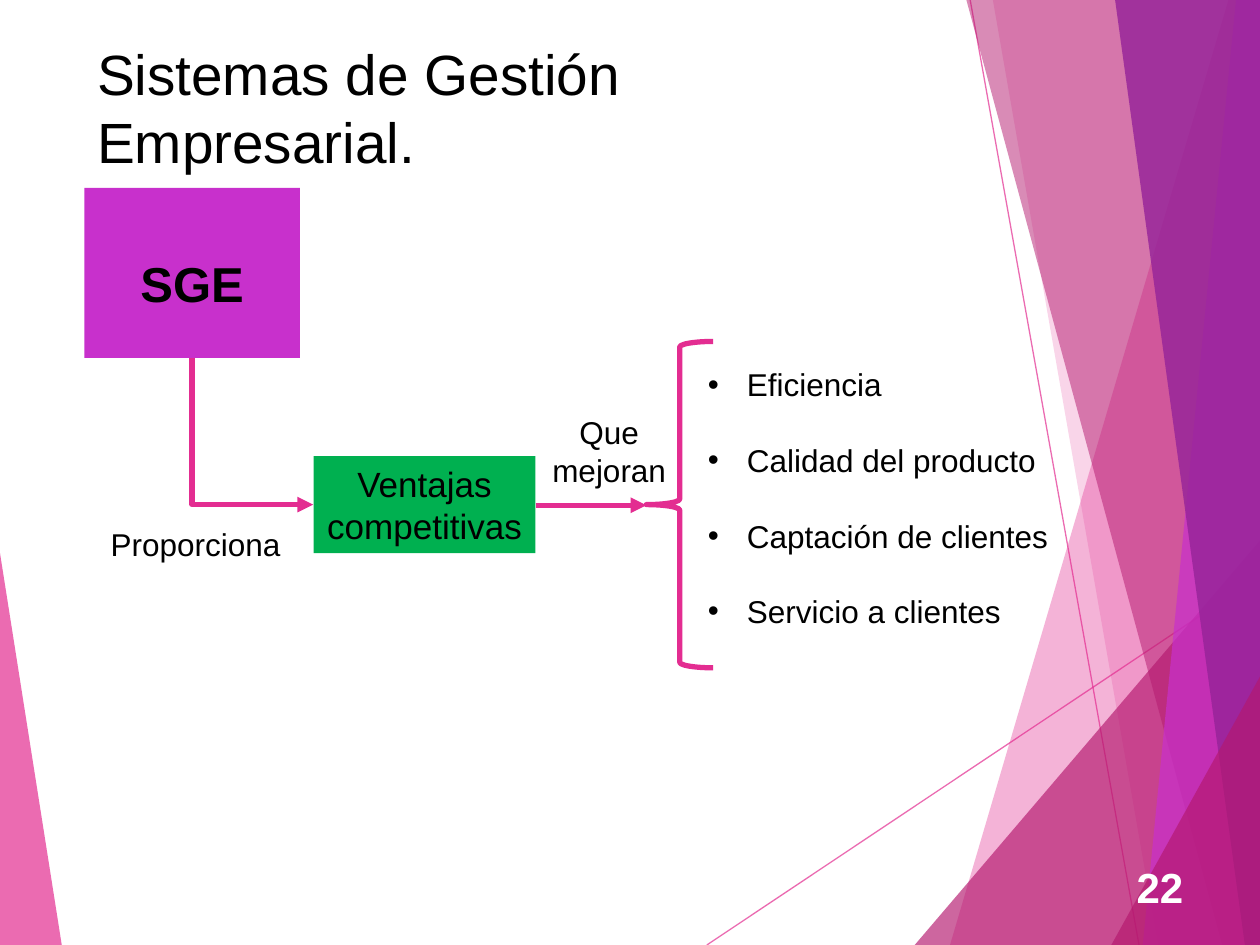
from lxml import etree
from pptx import Presentation
from pptx import util as u
from pptx.dml import color
from pptx.enum import shapes, text
from pptx.oxml import ns

PINK, WINE, ORCHID, PURPLE = "E32D91", "B4186E", "C830CC", "962499"
BLACK, WHITE, GREEN = "000000", "FFFFFF", "00B050"
ARROW = shapes.MSO_CONNECTOR.STRAIGHT
ELBOW = shapes.MSO_CONNECTOR.ELBOW
LEFT, CENTER, RIGHT = text.PP_ALIGN.LEFT, text.PP_ALIGN.CENTER, text.PP_ALIGN.RIGHT
TOP, MIDDLE = text.MSO_ANCHOR.TOP, text.MSO_ANCHOR.MIDDLE

deck = Presentation()
deck.slide_width, deck.slide_height = u.Inches(10), u.Inches(7.5)
cell = deck.slide_width // 1000
page = deck.slides.add_slide(deck.slide_layouts[5])


def colour(fill, value, opacity=100):
    fill.solid()
    fill.fore_color.rgb = color.RGBColor.from_string(value)
    if opacity < 100:
        node = fill._xPr.find(".//" + ns.qn("a:srgbClr"))
        etree.SubElement(node, ns.qn("a:alpha"), val=str(opacity * 1000))


def write(box, lines, size, align, anchor=TOP, wrap=False, value=BLACK, bold=False):
    frame = box.text_frame
    frame.text = "\n".join(lines)
    frame.word_wrap = wrap
    frame.auto_size = text.MSO_AUTO_SIZE.NONE
    frame.vertical_anchor = anchor
    for para in frame.paragraphs:
        para.alignment = align
        para.line_spacing = u.Pt(size * 1.2)
        for span in para.runs:
            span.font.name, span.font.size, span.font.bold = "Arial", u.Pt(size), bold
            colour(span.font.fill, value)


lines = [
    (ARROW, (561, 750, 1000, 457), 0.75, 70, False),
    (ARROW, (770, 0, 904, 750), 0.75, 70, False),
    (ELBOW, (259, 294, 142, 390), 3, 100, True),
    (ARROW, (425, 401, 513, 401), 3, 100, True),
]
for kind, ends, weight, opacity, arrowhead in lines:
    line = page.shapes.add_connector(kind, *[n * cell for n in ends])
    line.line.width = u.Pt(weight)
    colour(line.line.fill, PINK, opacity)
    properties = line.element.spPr
    if arrowhead:
        etree.SubElement(properties.find(ns.qn("a:ln")), ns.qn("a:tailEnd"), type="triangle")
    if kind == ELBOW:
        properties.find(ns.qn("a:xfrm")).set("rot", "16200000")
        properties.find(ns.qn("a:prstGeom")).set("prst", "bentConnector2")
    etree.SubElement(properties, ns.qn("a:effectLst"))

panels = [
    ([(0, 439), (49, 750), (0, 750)], PINK, 70),
    ([(975, 0), (754, 750), (1000, 750), (1000, 0)], PINK, 36),
    ([(788, 0), (919, 750), (1000, 750), (1000, 0)], PINK, 20),
    ([(726, 750), (1000, 429), (1000, 750)], WINE, 66),
    ([(767, 0), (970, 750), (1000, 750), (1000, 0)], WINE, 50),
    ([(981, 0), (907, 750), (1000, 750), (1000, 0)], ORCHID, 70),
    ([(885, 0), (988, 750), (1000, 750), (1000, 0)], PURPLE, 82),
    ([(882, 750), (1000, 537), (1000, 750)], WINE, 66),
]
for points, value, opacity in panels:
    outline = page.shapes.build_freeform(*points[0], scale=cell)
    outline.add_line_segments(points[1:], close=True)
    panel = outline.convert_to_shape()
    panel.shadow.inherit = False
    panel.line.fill.background()
    colour(panel.fill, value, opacity)

title = page.shapes.title
title.left, title.top, title.width, title.height = [n * cell for n in (67, 21, 694, 128)]
write(title, ["Sistemas de Gestión Empresarial."], 32.4, LEFT, MIDDLE, wrap=True)

blocks = [
    ((67, 149, 171, 135), ORCHID, ["SGE"], 28, True),
    ((249, 362, 176, 77), GREEN, ["Ventajas", "competitivas"], 20, False),
]
for place, value, words, size, bold in blocks:
    block = page.shapes.add_shape(shapes.MSO_SHAPE.RECTANGLE, *[n * cell for n in place])
    block.shadow.inherit = False
    block.line.fill.background()
    colour(block.fill, value)
    write(block, words, size, CENTER, bold=bold)
    if bold:
        block.text_frame.margin_top = 52 * cell

brace = page.shapes.add_shape(shapes.MSO_SHAPE.LEFT_BRACE, *[n * cell for n in (513, 271, 53, 259)])
brace.shadow.inherit = False
brace.fill.background()
brace.line.width = u.Pt(3)
colour(brace.line.fill, PINK)

labels = [
    ((78, 412, 156, 40), ["Proporciona"], LEFT),
    ((428, 323, 111, 71), ["Que", "mejoran"], CENTER),
    ((552, 285, 293, 222),
     ["Eficiencia", "Calidad del producto", "Captación de clientes", "Servicio a clientes"], LEFT),
]
for place, words, align in labels:
    label = page.shapes.add_textbox(*[n * cell for n in place])
    write(label, words, 18, align)

for para in label.text_frame.paragraphs:
    para.space_after = u.Pt(21.6)
    properties = para._p.get_or_add_pPr()
    properties.set("marL", str(31 * cell))
    properties.set("indent", str(-31 * cell))
    etree.SubElement(properties, ns.qn("a:buFont"), typeface="Arial")
    etree.SubElement(properties, ns.qn("a:buChar"), char="•")

number = page.shapes.add_textbox(*[n * cell for n in (841, 684, 108, 40)])
write(number, ["22"], 24, RIGHT, MIDDLE, wrap=True, value=WHITE, bold=True)

deck.save("out.pptx")
